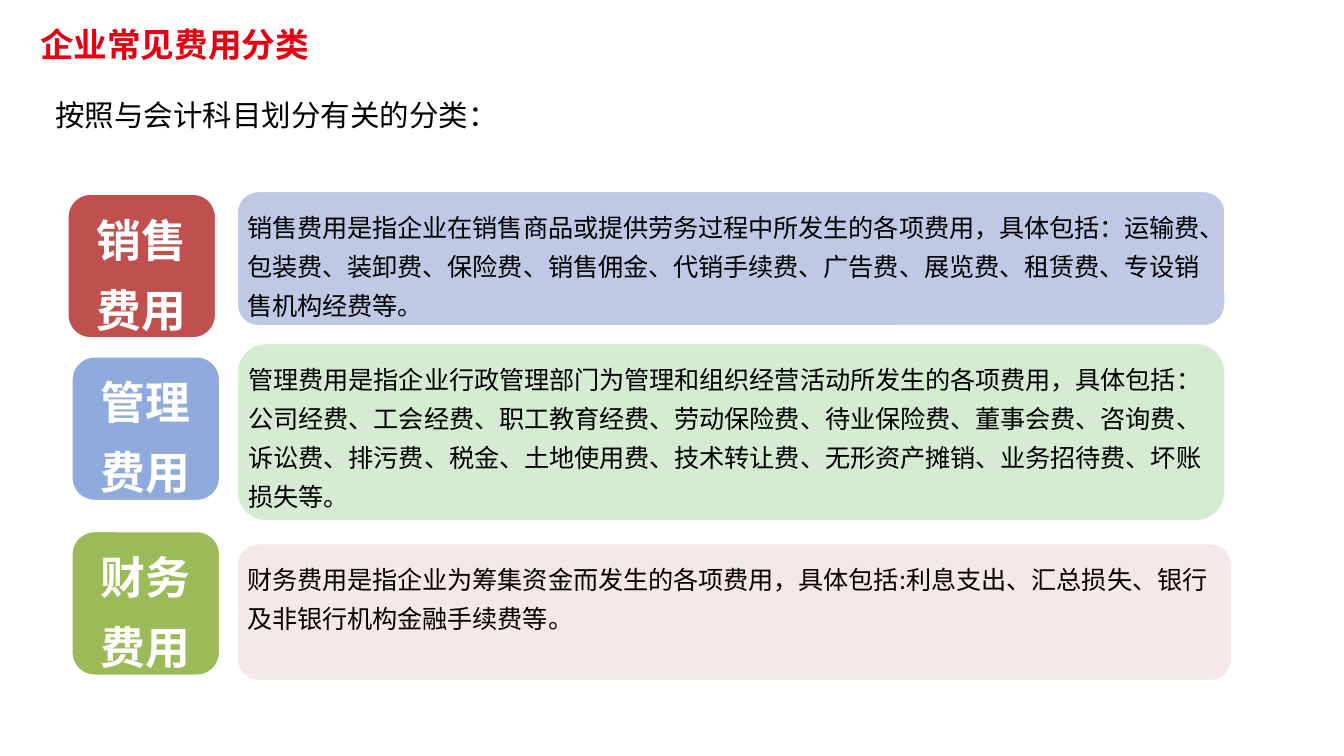
from dataclasses import dataclass

from lxml.etree import SubElement
from pptx import Presentation
from pptx.dml.color import RGBColor
from pptx.enum.shapes import MSO_SHAPE
from pptx.enum.text import MSO_ANCHOR as Anchor, MSO_AUTO_SIZE as AutoSize, PP_ALIGN as Align
from pptx.oxml.ns import qn
from pptx.util import Inches, Pt


@dataclass(frozen=True)
class Theme:
    font: str = "Noto Sans CJK SC"
    title: str = "E50012"
    text: str = "000000"
    white: str = "FFFFFF"
    sales: str = "C0504D"
    sales_light: str = "BFC8E4"
    admin: str = "8FAADC"
    admin_light: str = "D5ECD3"
    finance: str = "9BBB59"
    finance_light: str = "F5E9E7"
    title_size: float = 18
    lead_size: float = 15.8
    label_size: float = 24
    body_size: float = 13.5
    border: float = 3
    spacing: float = 1.3


THEME = Theme()

# Each category: label, label colour, label position, panel colour, panel box,
# inset and height of the description, description
CATEGORIES = [
    ("销售", THEME.sales, (0.49, 1.43), THEME.sales_light, (1.75, 1.41, 7.38, 1.03), 0.05, 0.93,
     "销售费用是指企业在销售商品或提供劳务过程中所发生的各项费用，具体包括：运输费、包装费、"
     "装卸费、保险费、销售佣金、代销手续费、广告费、展览费、租赁费、专设销售机构经费等。"),
    ("管理", THEME.admin, (0.52, 2.64), THEME.admin_light, (1.75, 2.54, 7.38, 1.35), 0.06, 1.23,
     "管理费用是指企业行政管理部门为管理和组织经营活动所发生的各项费用，具体包括：公司经费、"
     "工会经费、职工教育经费、劳动保险费、待业保险费、董事会费、咨询费、诉讼费、排污费、税金、"
     "土地使用费、技术转让费、无形资产摊销、业务招待费、坏账损失等。"),
    ("财务", THEME.finance, (0.52, 3.94), THEME.finance_light, (1.75, 4.03, 7.43, 1.05), 0.05, 0.64,
     "财务费用是指企业为筹集资金而发生的各项费用，具体包括:利息支出、汇总损失、银行及非银行"
     "机构金融手续费等。"),
]


def add_text(shapes, box, *lines, size, color=THEME.text, bold=False, align=Align.LEFT,
             anchor=Anchor.TOP, spacing=None, margins=(0.04, 0.04), grow=True):
    shape = shapes.add_textbox(*map(Inches, box))
    frame = shape.text_frame
    frame.word_wrap = True
    frame.auto_size = AutoSize.SHAPE_TO_FIT_TEXT if grow else AutoSize.NONE
    frame.vertical_anchor = anchor
    frame.margin_left = frame.margin_right = Inches(margins[0])
    frame.margin_top = frame.margin_bottom = Inches(margins[1])
    for index, line in enumerate(lines):
        paragraph = frame.paragraphs[0] if index == 0 else frame.add_paragraph()
        paragraph.alignment = align
        paragraph.line_spacing = spacing
        run = paragraph.add_run()
        run.text = line
        font = run.font
        font.name, font.size, font.bold = THEME.font, Pt(size), bold
        font.color.rgb = RGBColor.from_string(color)
        SubElement(run._r.get_or_add_rPr(), qn("a:ea"), typeface=THEME.font)


def add_panel(shapes, box, color):
    shape = shapes.add_shape(MSO_SHAPE.ROUNDED_RECTANGLE, *map(Inches, box))
    shape.shadow.inherit = False
    shape.fill.solid()
    shape.fill.fore_color.rgb = RGBColor.from_string(color)
    shape.line.color.rgb = RGBColor.from_string(THEME.white)
    shape.line.width = Pt(THEME.border)


def add_description(slide, box, color, inset, height, text):
    left, top, width, _ = box
    shapes = slide.shapes.add_group_shape().shapes
    add_panel(shapes, box, color)
    add_text(shapes, (left + inset, top + 0.06, width - 2 * inset, height), text,
             size=THEME.body_size, spacing=THEME.spacing)


def add_label(slide, left, top, color, name):
    shapes = slide.shapes.add_group_shape().shapes
    add_panel(shapes, (left, top, 1.13, 1.1), color)
    add_text(shapes, (left + 0.05, top + 0.01, 1.02, 1.08), name, "费用",
             size=THEME.label_size, color=THEME.white, bold=True, align=Align.CENTER,
             anchor=Anchor.MIDDLE, spacing=THEME.spacing)


def main():
    presentation = Presentation()
    presentation.slide_width = Inches(10)
    presentation.slide_height = Inches(10 * 9 / 16)
    slide = presentation.slides.add_slide(presentation.slide_layouts[6])

    add_text(slide.shapes, (0.2, 0.14, 5.68, 0.38), "企业常见费用分类", size=THEME.title_size,
             color=THEME.title, bold=True, anchor=Anchor.MIDDLE, margins=(0.1, 0.05), grow=False)
    add_text(slide.shapes, (0.37, 0.67, 8.19, 0.37), "按照与会计科目划分有关的分类：",
             size=THEME.lead_size, margins=(0.04, 0.05))

    for _, _, _, panel_color, box, inset, height, text in CATEGORIES:
        add_description(slide, box, panel_color, inset, height, text)
    for name, color, position, *_ in CATEGORIES:
        add_label(slide, *position, color, name)

    presentation.save("out.pptx")


if __name__ == "__main__":
    main()
